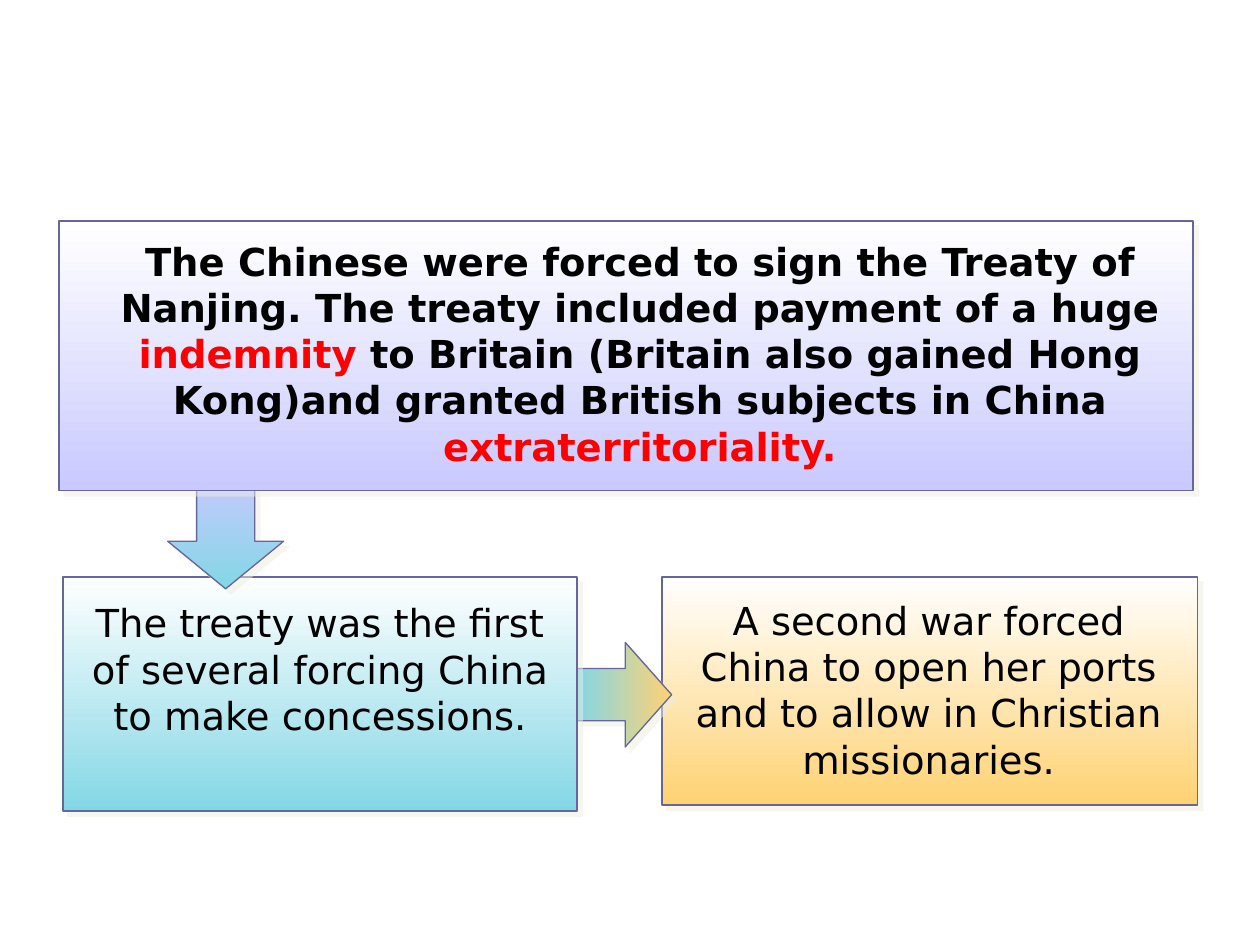
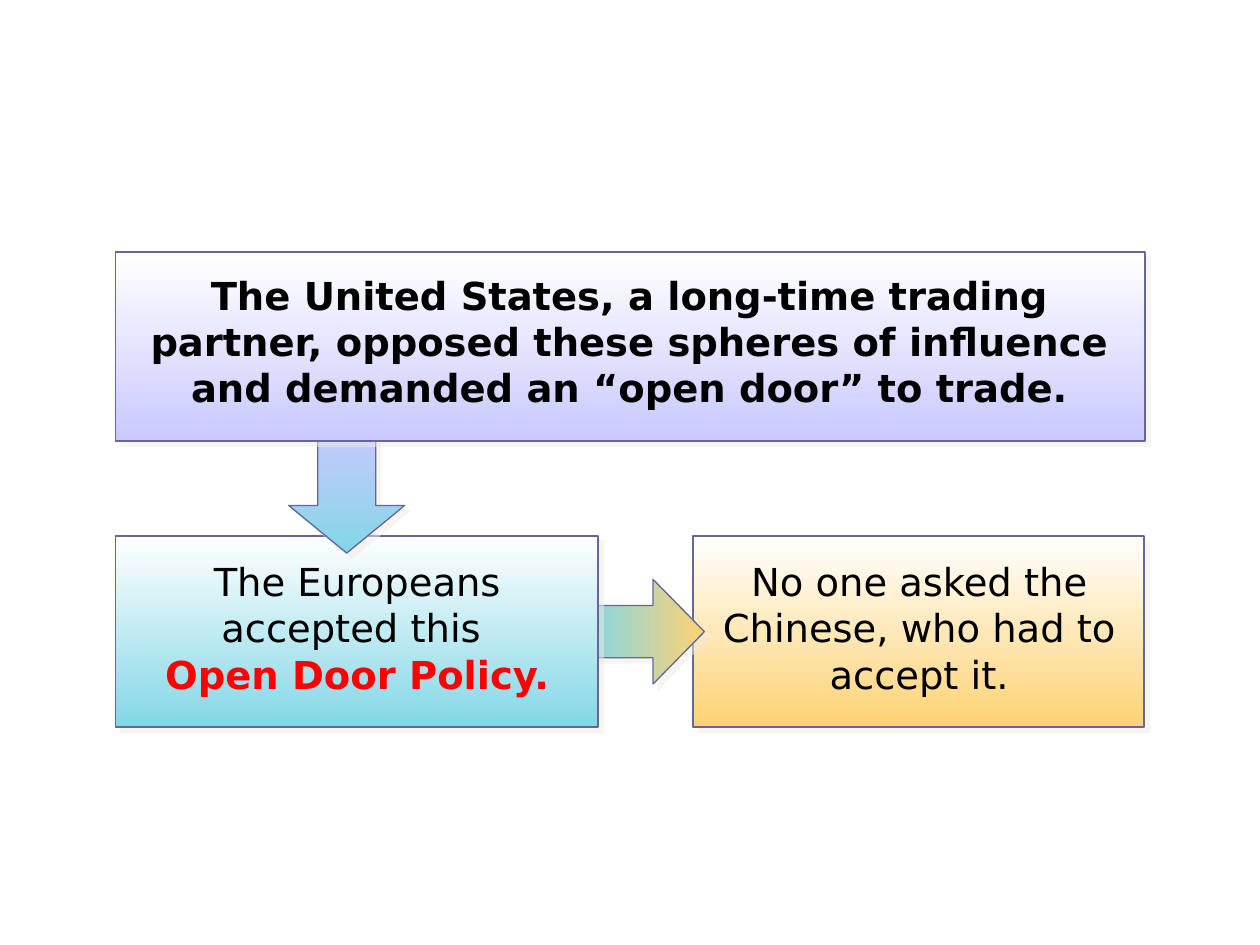
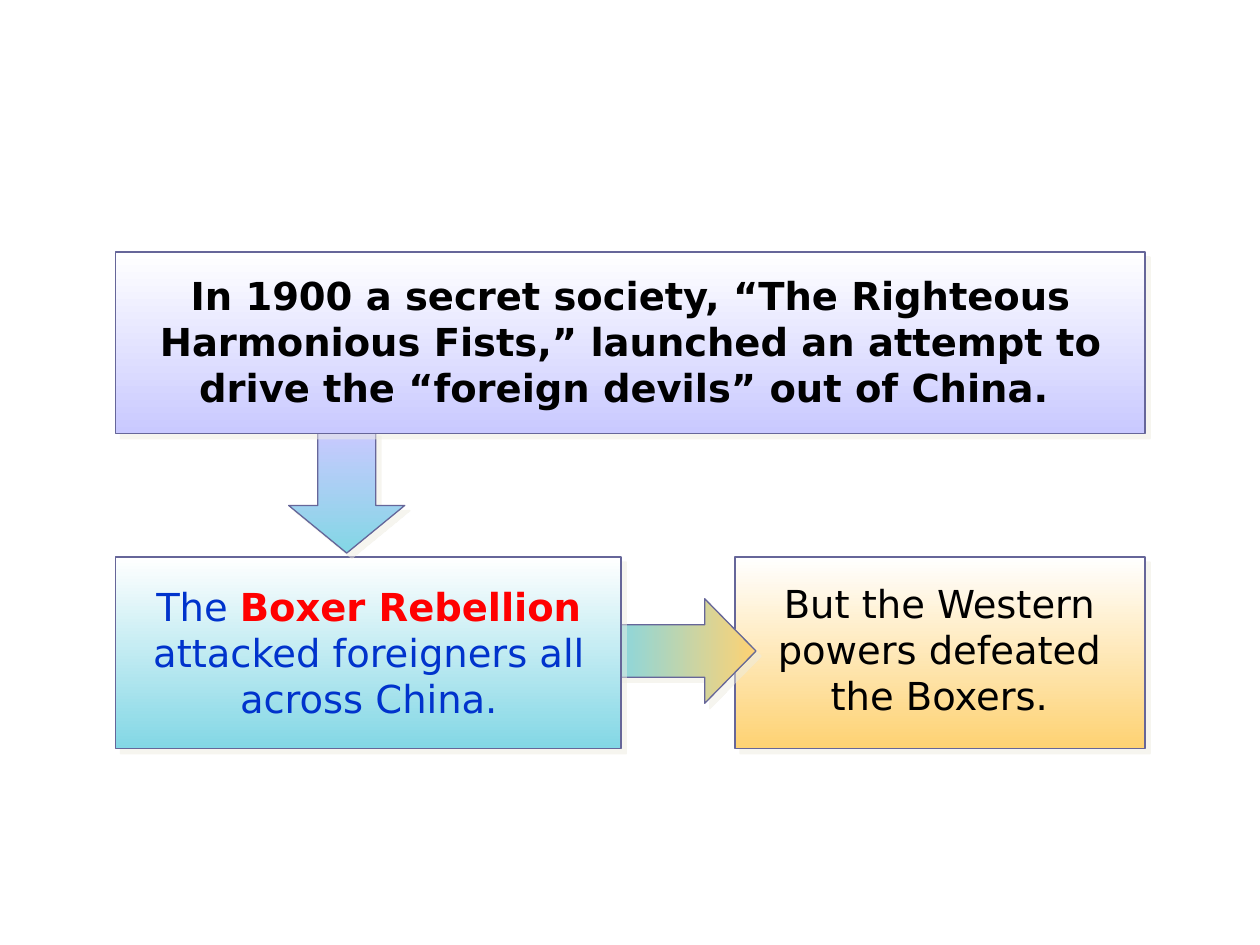
from dataclasses import dataclass
from typing import NamedTuple

from lxml import etree
from pptx import Presentation
from pptx.dml.color import RGBColor
from pptx.enum import shapes, text
from pptx.oxml import ns
from pptx.util import Cm, Pt

BLACK = RGBColor(0x00, 0x00, 0x00)
RED = RGBColor(0xFF, 0x00, 0x00)
BLUE = RGBColor(0x00, 0x33, 0xCC)
WHITE = RGBColor(0xFF, 0xFF, 0xFF)
LILAC = RGBColor(0xC9, 0xC9, 0xFF)
AQUA = RGBColor(0x83, 0xD7, 0xE5)
AMBER = RGBColor(0xFE, 0xD2, 0x73)
OUTLINE = RGBColor(0x66, 0x66, 0x99)
SHADOW = RGBColor(0xEE, 0xEC, 0xE1)

FONT = "DejaVu Sans"
FONT_SIZE = Pt(22)
DOWNWARD, RIGHTWARD = 270, 0
SHAPE = shapes.MSO_SHAPE


class Area(NamedTuple):
    """Left, top, width and height in centimetres."""
    left: float
    top: float
    width: float
    height: float

    def lengths(self) -> list[Cm]:
        return [Cm(v) for v in self]


class Run(NamedTuple):
    words: str
    color: RGBColor = BLACK
    bold: bool = False


@dataclass
class Panel:
    box: Area
    text_area: Area
    runs: list[Run]
    indent: float = 0


@dataclass
class Flow:
    """A cause on top, the response below it, and the outcome at its right."""
    cause: Panel
    down: Area
    response: Panel
    across: Area
    outcome: Panel


FLOWS = [
    Flow(
        cause=Panel(Area(1.19, 4.45, 22.86, 5.44), Area(1.47, 4.67, 22.86, 4.95), [
            Run("The Chinese were forced to sign the Treaty of Nanjing. "
                "The treaty included payment of a huge ", bold=True),
            Run("indemnity", RED, True),
            Run(" to Britain (Britain also gained Hong Kong)and granted "
                "British subjects in China ", bold=True),
            Run("extraterritoriality.", RED, True)]),
        down=Area(3.38, 9.53, 2.34, 2.34),
        response=Panel(Area(1.27, 11.63, 10.36, 4.72), Area(1.47, 11.96, 9.96, 3.05), [
            Run("The treaty was the first of several forcing China "
                "to make concessions.")]),
        across=Area(11.63, 12.95, 1.91, 2.11),
        outcome=Panel(Area(13.34, 11.63, 10.8, 4.6), Area(13.13, 11.91, 11, 3.99), [
            Run("A second war forced China to open her ports and to allow in "
                "Christian missionaries.")], indent=0.18),
    ),
    Flow(
        cause=Panel(Area(2.33, 5.08, 20.75, 3.81), Area(2.74, 5.36, 19.89, 3.05), [
            Run("The United States, a long-time trading partner, opposed these "
                "spheres of influence and demanded an “open door” to trade.",
                bold=True)]),
        down=Area(5.82, 8.69, 2.34, 2.46),
        response=Panel(Area(2.33, 10.8, 9.73, 3.86), Area(2.74, 11.13, 8.92, 3.05), [
            Run("The Europeans accepted this \n"),
            Run("Open Door Policy.", RED, True)]),
        across=Area(11.86, 11.68, 2.34, 2.11),
        outcome=Panel(Area(13.97, 10.8, 9.1, 3.86), Area(14.2, 11.13, 8.66, 3.05), [
            Run("No one asked the Chinese, who had to accept it.")]),
    ),
    Flow(
        cause=Panel(Area(2.33, 5.08, 20.75, 3.66), Area(2.59, 5.36, 20.24, 3.05), [
            Run("In 1900 a secret society, “The Righteous Harmonious Fists,” "
                "launched an attempt to drive the “foreign devils” out of China. ",
                bold=True)]),
        down=Area(5.82, 8.69, 2.34, 2.46),
        response=Panel(Area(2.33, 11.23, 10.19, 3.86), Area(2.62, 11.63, 9.63, 3.05), [
            Run("The ", BLUE),
            Run("Boxer Rebellion ", RED, True),
            Run("attacked foreigners all across China.", BLUE)]),
        across=Area(12.28, 12.07, 2.96, 2.11),
        outcome=Panel(Area(14.82, 11.23, 8.26, 3.86), Area(15.01, 11.56, 7.85, 3.05), [
            Run("But the Western powers defeated the Boxers.")]),
    ),
]


def add_shadow(sp) -> None:
    sp.shadow.inherit = False
    effects = sp.element.spPr.find(ns.qn("a:effectLst"))
    outer = etree.SubElement(effects, ns.qn("a:outerShdw"), blurRad="0",
                             dist=str(Pt(4.2)), dir="2700000", algn="ctr",
                             rotWithShape="0")
    color = etree.SubElement(outer, ns.qn("a:srgbClr"), val=str(SHADOW))
    etree.SubElement(color, ns.qn("a:alpha"), val="50000")


def add_gradient_shape(parent, kind, area: Area, start: RGBColor, end: RGBColor,
                       angle: int, line_width: float):
    sp = parent.add_shape(kind, *area.lengths())
    sp.fill.gradient()
    sp.fill.gradient_angle = angle
    for stop, color, position in zip(sp.fill.gradient_stops, (start, end), (0, 1)):
        stop.color.rgb = color
        stop.position = position
    sp.line.color.rgb = OUTLINE
    sp.line.width = Pt(line_width)
    add_shadow(sp)
    return sp


def add_arrow(parent, kind, area: Area, start: RGBColor, end: RGBColor,
              angle: int, head: float) -> None:
    sp = add_gradient_shape(parent, kind, area, start, end, angle, 0.75)
    sp.adjustments[0] = 0.5
    sp.adjustments[1] = head


def add_panel(parent, panel: Panel, color: RGBColor) -> None:
    group = parent.add_group_shape().shapes
    add_gradient_shape(group, SHAPE.RECTANGLE, panel.box, WHITE, color, DOWNWARD, 1)
    tf = group.add_textbox(*panel.text_area.lengths()).text_frame
    tf.word_wrap = True
    tf.auto_size = text.MSO_AUTO_SIZE.SHAPE_TO_FIT_TEXT
    p = tf.paragraphs[0]
    p.alignment = text.PP_ALIGN.CENTER
    if panel.indent:
        p._p.get_or_add_pPr().set("marL", str(Cm(panel.indent)))
    for run in panel.runs:
        r = p.add_run()
        r.text = run.words.rstrip("\n")
        r.font.name = FONT
        r.font.size = FONT_SIZE
        r.font.bold = run.bold
        r.font.color.rgb = run.color
        if run.words.endswith("\n"):
            p.add_line_break()


def add_flow_slide(prs, flow: Flow) -> None:
    s = prs.slides.add_slide(prs.slide_layouts.get_by_name("Blank")).shapes
    add_panel(s, flow.outcome, AMBER)
    add_arrow(s, SHAPE.RIGHT_ARROW, flow.across, AQUA, AMBER, RIGHTWARD, 0.49)
    add_panel(s, flow.response, AQUA)
    add_arrow(s, SHAPE.DOWN_ARROW, flow.down, LILAC, AQUA, DOWNWARD, 0.41)
    add_panel(s, flow.cause, LILAC)


def main() -> None:
    prs = Presentation()
    prs.slide_width, prs.slide_height = Cm(25.4), Cm(19.05)
    for flow in FLOWS:
        add_flow_slide(prs, flow)
    prs.save("out.pptx")


if __name__ == "__main__":
    main()
